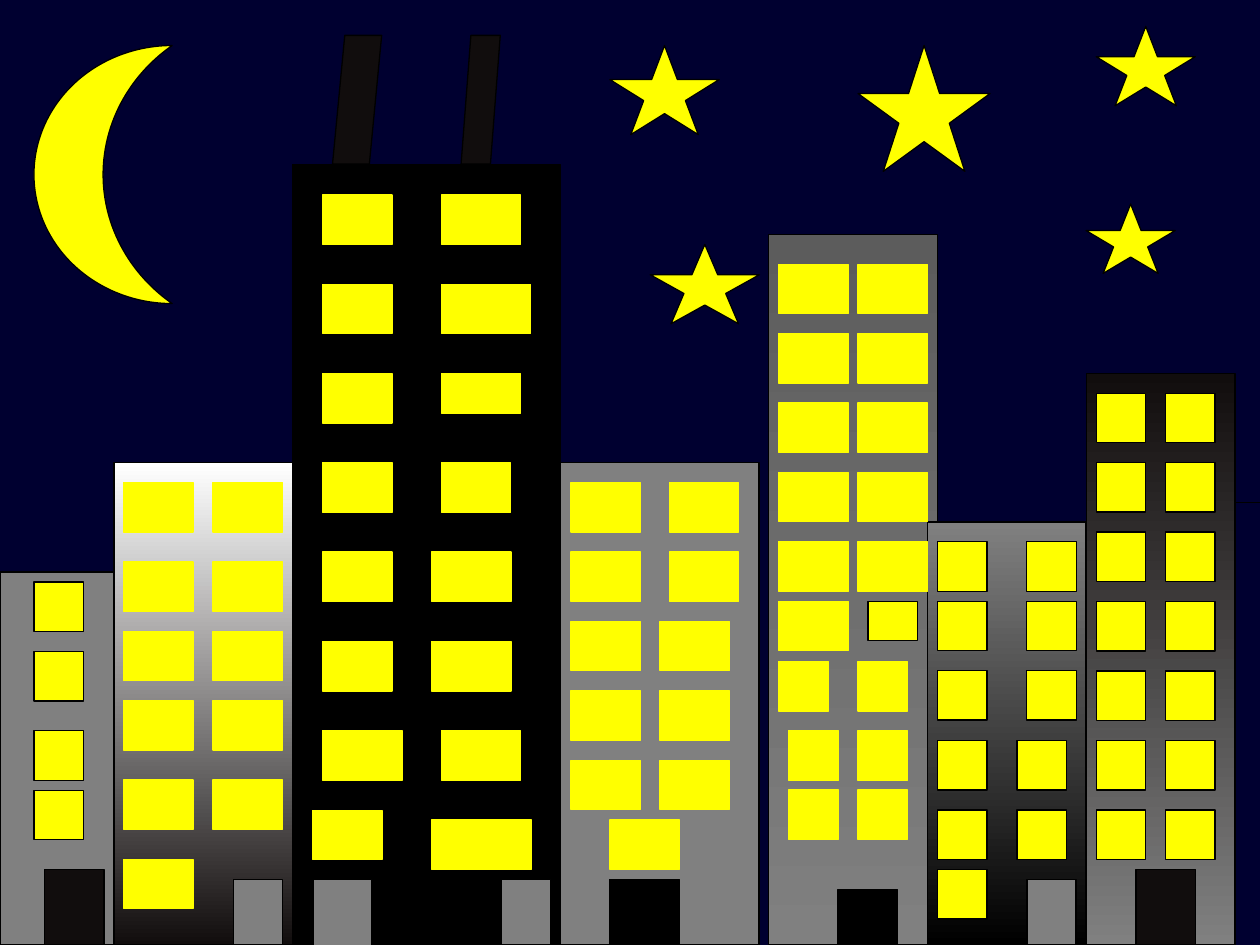
from dataclasses import dataclass
from typing import Any

from lxml.etree import SubElement
from pptx import Presentation
from pptx.dml.color import RGBColor
from pptx.enum.shapes import MSO_CONNECTOR, MSO_SHAPE
from pptx.oxml.ns import qn
from pptx.util import Pt

COLORS = {
    "night": "000030", "yellow": "FFFF00", "black": "000000", "soot": "110D0D",
    "gray": "808080", "slate": "5C5C5C", "white": "FFFFFF",
}


def color(name):
    return RGBColor.from_string(COLORS[name])


def rows(top, step, count):
    return [top + step * i for i in range(count)]


@dataclass
class Scene:
    slide: Any
    edge: str = "black"
    glow: str = "yellow"
    width: float = 0.75
    pane: tuple = (39.7, 28.3)

    def sky(self, fill):
        back = self.slide.background.fill
        back.solid()
        back.fore_color.rgb = color(fill)

    def shape(self, kind, box, fill, edge=None):
        """Fill is one colour name, or a (top, bottom) pair for a gradient."""
        item = self.slide.shapes.add_shape(kind, *map(Pt, box))
        item.shadow.inherit = False
        if isinstance(fill, tuple):
            item.fill.gradient()
            item.fill.gradient_angle = 270
            for stop, name in zip(item.fill.gradient_stops, fill):
                stop.color.rgb = color(name)
        else:
            item.fill.solid()
            item.fill.fore_color.rgb = color(fill)
        item.line.color.rgb = color(edge or self.edge)
        item.line.width = Pt(self.width)
        return item

    def block(self, box, fill):
        return self.shape(MSO_SHAPE.RECTANGLE, box, fill)

    def star(self, box):
        return self.shape(MSO_SHAPE.STAR_5_POINT, box, self.glow)

    def moon(self, box):
        return self.shape(MSO_SHAPE.MOON, box, self.glow)

    def mast(self, box):
        return self.shape(MSO_SHAPE.PARALLELOGRAM, box, "soot")

    def panes(self, lefts, tops, size=None, edge="yellow"):
        """Lit windows at every crossing of lefts and tops."""
        for top in tops:
            for left in lefts:
                box = (left, top, *(size or self.pane))
                self.shape(MSO_SHAPE.RECTANGLE, box, self.glow, edge)

    def line(self, *ends):
        item = self.slide.shapes.add_connector(
            MSO_CONNECTOR.STRAIGHT, *map(Pt, ends))
        item.line.color.rgb = color(self.edge)
        item.line.width = Pt(self.width)
        SubElement(item._element.spPr, qn("a:effectLst"))


def draw_sky(scene):
    scene.sky("night")
    scene.moon((19.4, 26, 79, 147.5))
    for box in [(348.5, 26, 62.5, 51), (490.3, 26, 75.5, 72),
                (620.6, 116.6, 51, 39.7), (371.5, 139.7, 62.5, 45.4),
                (626.4, 15.1, 56.7, 45.4)]:
        scene.star(box)
    for left, width in [(190, 28.1), (263.5, 22.4)]:
        scene.mast((left, 20.2, width, 73.5))


def draw_blocks(scene):
    base = 540
    for left, top, width, fill in [
        (167, 94.2, 153.4, "black"),
        (320.4, 264.4, 113.4, "gray"),
        (439.2, 134, 96.5, ("slate", "gray")),
        (65.2, 264.4, 101.8, ("white", "soot")),
        (530, 298.3, 90.7, ("gray", "black")),
        (620.7, 213.3, 85, ("soot", "gray")),
        (0, 326.9, 65, "gray"),
    ]:
        scene.block((left, top, width, base - top), fill)
    scene.line(705.6, 287.1, 720, 287.1)


def draw_doors(scene):
    for left, top, width, height, fill in [
        (348.5, 502.6, 22.9, 37.4, "black"),
        (371.4, 502.6, 17, 37.4, "black"),
        (178.8, 502.6, 33.6, 43, "gray"),
        (286.6, 502.6, 28.1, 37.4, "gray"),
        (133.4, 502.6, 28.1, 37.4, "gray"),
        (586.8, 502.6, 28.1, 37.4, "gray"),
        (478.8, 508.3, 34, 31.7, "black"),
        (649.2, 496.8, 34, 43.2, "soot"),
        (25.4, 496.8, 34, 43.2, "soot"),
    ]:
        scene.block((left, top, width, height), fill)


def draw_panes(scene):
    small, wide = (28.3, 28.3), (45.4, 28.3)

    # Black tower
    floors = rows(111.4, 51.03, 7)
    scene.panes([184.3], floors[:6])
    scene.panes([184.3], floors[6:], wide)
    scene.panes([178.6], [463])
    for left, top, size in zip(
        [252.2] * 4 + [246.7] * 2 + [252.2], floors,
        [wide, (51, 28.3), (45.4, 22.7), scene.pane, wide, wide, wide],
    ):
        scene.panes([left], [top], size)
    scene.panes([246.7], [468.6], (56.9, 28.3))

    # Gray block in the middle
    floors = rows(275.8, 39.65, 5)
    scene.panes([326.2, 382.5], floors[:2])
    scene.panes([326.2, 377.1], floors[2:])
    scene.panes([348.5], [468.6])

    # Pale block
    scene.panes([70.6, 121.7], [275.8, 321.1, 360.7, 400.3, 445.7])
    scene.panes([70.6], [491])

    # Slate tower
    scene.panes([445, 490.3], rows(151, 39.65, 5))
    scene.panes([445], [343.6])
    scene.panes([496.1], [343.6], (28.3, 22.5), "black")
    scene.panes([445, 490.3], [378], small)
    scene.panes([450.7, 490.3], [417.6, 451.4], small)

    # Small dark-edged panes
    for lefts, tops in [
        ([535.7, 586.8], [309.6, 343.6, 383.2]),
        ([535.7, 581.1], [423.2, 462.9]),
        ([535.7], [496.9]),
        ([626.4, 666], rows(224.7, 39.7, 7)),
        ([19.5], [332.6, 372.3, 417.6, 451.6]),
    ]:
        scene.panes(lefts, tops, small, "black")


def main():
    deck = Presentation()
    deck.slide_width, deck.slide_height = Pt(720), Pt(540)
    scene = Scene(deck.slides.add_slide(deck.slide_layouts[6]))
    draw_sky(scene)
    draw_blocks(scene)
    draw_doors(scene)
    draw_panes(scene)
    deck.save("out.pptx")


if __name__ == "__main__":
    main()
